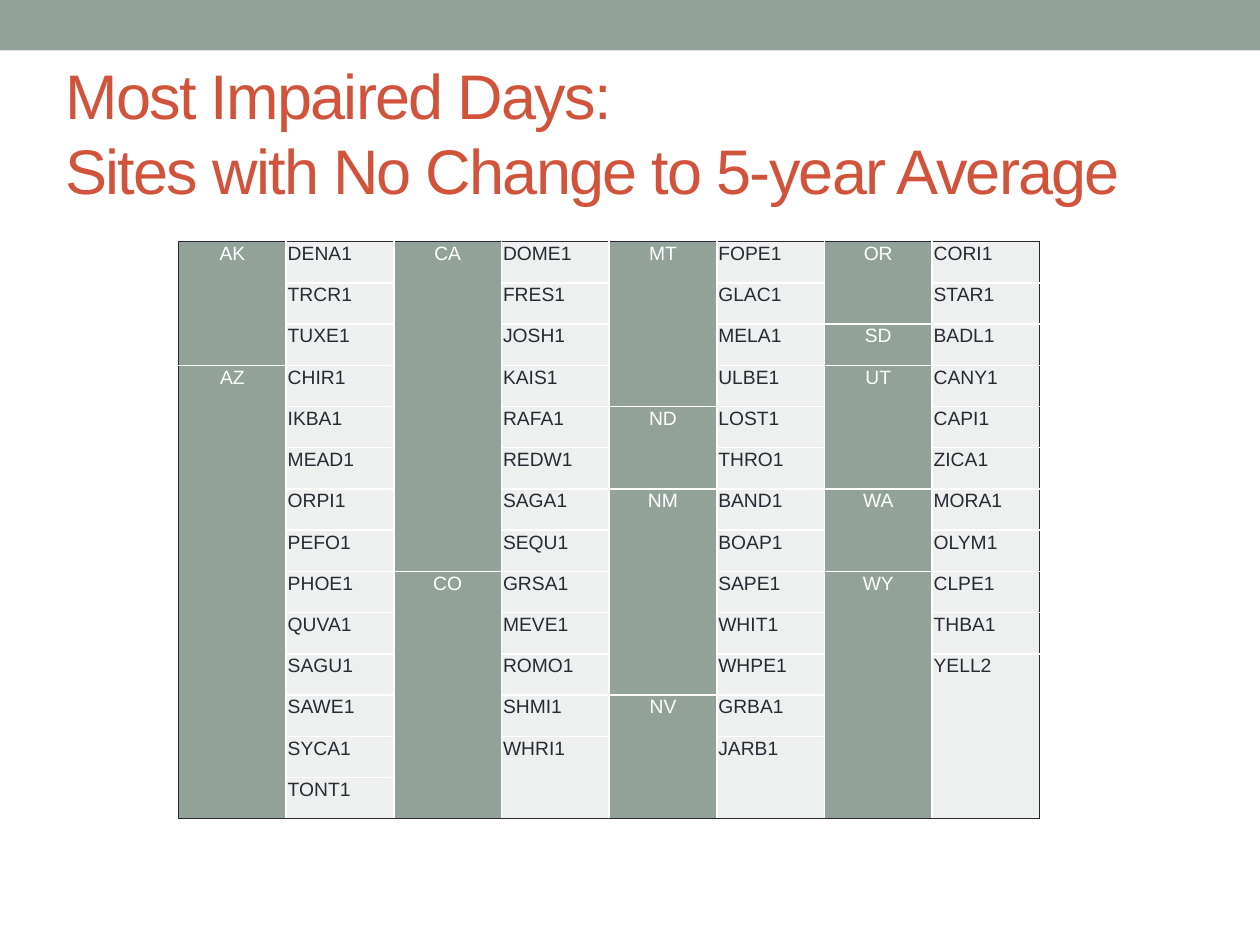
from lxml import etree
from pptx import Presentation
from pptx import util as u
from pptx.dml.color import RGBColor
from pptx.enum import shapes, text
from pptx.oxml.ns import qn

SAGE, PALE, DARK, WHITE, RUST = "93A299", "EEF0EF", "292934", "FFFFFF", "D2533C"
NO_STYLE = "{2D5ABB26-0587-4C30-8999-92F81FD0307C}"
ROWS = 14

# One entry per pair of table columns: each state with its sites
STATE_GROUPS = [
    {"AK": "DENA1 TRCR1 TUXE1",
     "AZ": "CHIR1 IKBA1 MEAD1 ORPI1 PEFO1 PHOE1 QUVA1 SAGU1 SAWE1 SYCA1 TONT1"},
    {"CA": "DOME1 FRES1 JOSH1 KAIS1 RAFA1 REDW1 SAGA1 SEQU1",
     "CO": "GRSA1 MEVE1 ROMO1 SHMI1 WHRI1"},
    {"MT": "FOPE1 GLAC1 MELA1 ULBE1", "ND": "LOST1 THRO1",
     "NM": "BAND1 BOAP1 SAPE1 WHIT1 WHPE1", "NV": "GRBA1 JARB1"},
    {"OR": "CORI1 STAR1", "SD": "BADL1", "UT": "CANY1 CAPI1 ZICA1",
     "WA": "MORA1 OLYM1", "WY": "CLPE1 THBA1 YELL2"},
]
COLS = 2 * len(STATE_GROUPS)


def rgb(value):
    return RGBColor.from_string(value)


def add_run(p, content, size, color):
    r = p.add_run()
    r.text = content
    r.font.size = u.Pt(size)
    r.font.name = "Arial"
    r.font.color.rgb = rgb(color)
    return r


def add_band(slide, width):
    sp = slide.shapes.add_shape(shapes.MSO_SHAPE.RECTANGLE, 0, 0, width, u.Cm(1.02))
    sp.shadow.inherit = False
    sp.fill.solid()
    sp.fill.fore_color.rgb = rgb(SAGE)
    sp.line.fill.background()


def add_title(slide, lines):
    sp = slide.shapes.add_textbox(u.Cm(1.07), u.Cm(1.07), u.Cm(22.86), u.Cm(3.18))
    tf = sp.text_frame
    tf.word_wrap = True
    tf.vertical_anchor = text.MSO_ANCHOR.MIDDLE
    p = tf.paragraphs[0]
    for i, line in enumerate(lines):
        if i:
            p.add_line_break()
        r = add_run(p, line, 36, RUST)
        r.font._element.set("spc", "-100")


def set_borders(cell, colors):
    """Draw 1 pt lines; colors maps a side (L, R, T, B) to a hex colour."""
    tcPr = cell._tc.get_or_add_tcPr()
    for i, (side, color) in enumerate(colors.items()):
        ln = etree.Element(qn(f"a:ln{side}"), w=str(u.Pt(1)))
        fill = etree.SubElement(ln, qn("a:solidFill"))
        etree.SubElement(fill, qn("a:srgbClr"), val=color)
        tcPr.insert(i, ln)


def fill_block(table, col, first, last, content, is_state):
    """Style the cells from row first to row last and merge them into one."""
    for row in range(first, last + 1):
        cell = table.cell(row, col)
        cell.margin_left = cell.margin_right = cell.margin_top = u.Cm(0.03)
        cell.margin_bottom = 0
        cell.fill.solid()
        cell.fill.fore_color.rgb = rgb(SAGE if is_state else PALE)
        borders = {"L": DARK if col == 0 else WHITE,
                   "R": DARK if col == COLS - 1 else WHITE}
        if row == first:
            borders["T"] = DARK if first == 0 else WHITE
        if row in (first, last):
            borders["B"] = DARK if last == ROWS - 1 else WHITE
        set_borders(cell, borders)
    cell = table.cell(first, col)
    if last > first:
        cell.merge(table.cell(last, col))
    p = cell.text_frame.paragraphs[0]
    p.alignment = text.PP_ALIGN.CENTER if is_state else text.PP_ALIGN.LEFT
    add_run(p, content, 11, WHITE if is_state else DARK)


def fill_group(table, col, group):
    """Fill a state column and its site column; the last entries reach the bottom."""
    row = 0
    for state, names in group.items():
        sites = names.split()
        end = row + len(sites) - 1
        bottom = ROWS - 1 if state == list(group)[-1] else end
        fill_block(table, col, row, bottom, state, True)
        for i, site in enumerate(sites, row):
            fill_block(table, col + 1, i, bottom if i == end else i, site, False)
        row = end + 1


def add_site_table(slide):
    width, height = u.Cm(17.36), u.Cm(11.64)
    frame = slide.shapes.add_table(ROWS, COLS, u.Cm(3.6), u.Cm(4.87), width, height)
    table = frame.table
    table.first_row = table.horz_banding = False
    table._tbl.tblPr.find(qn("a:tableStyleId")).text = NO_STYLE
    for column in table.columns:
        column.width = width // COLS
    for row in table.rows:
        row.height = height // ROWS
    for i, group in enumerate(STATE_GROUPS):
        fill_group(table, 2 * i, group)


def main():
    prs = Presentation()
    prs.slide_width, prs.slide_height = u.Cm(25.4), u.Cm(19.05)
    slide = prs.slides.add_slide(prs.slide_layouts[6])
    add_band(slide, prs.slide_width)
    add_title(slide, ["Most Impaired Days:", "Sites with No Change to 5-year Average"])
    add_site_table(slide)
    prs.save("out.pptx")


if __name__ == "__main__":
    main()
